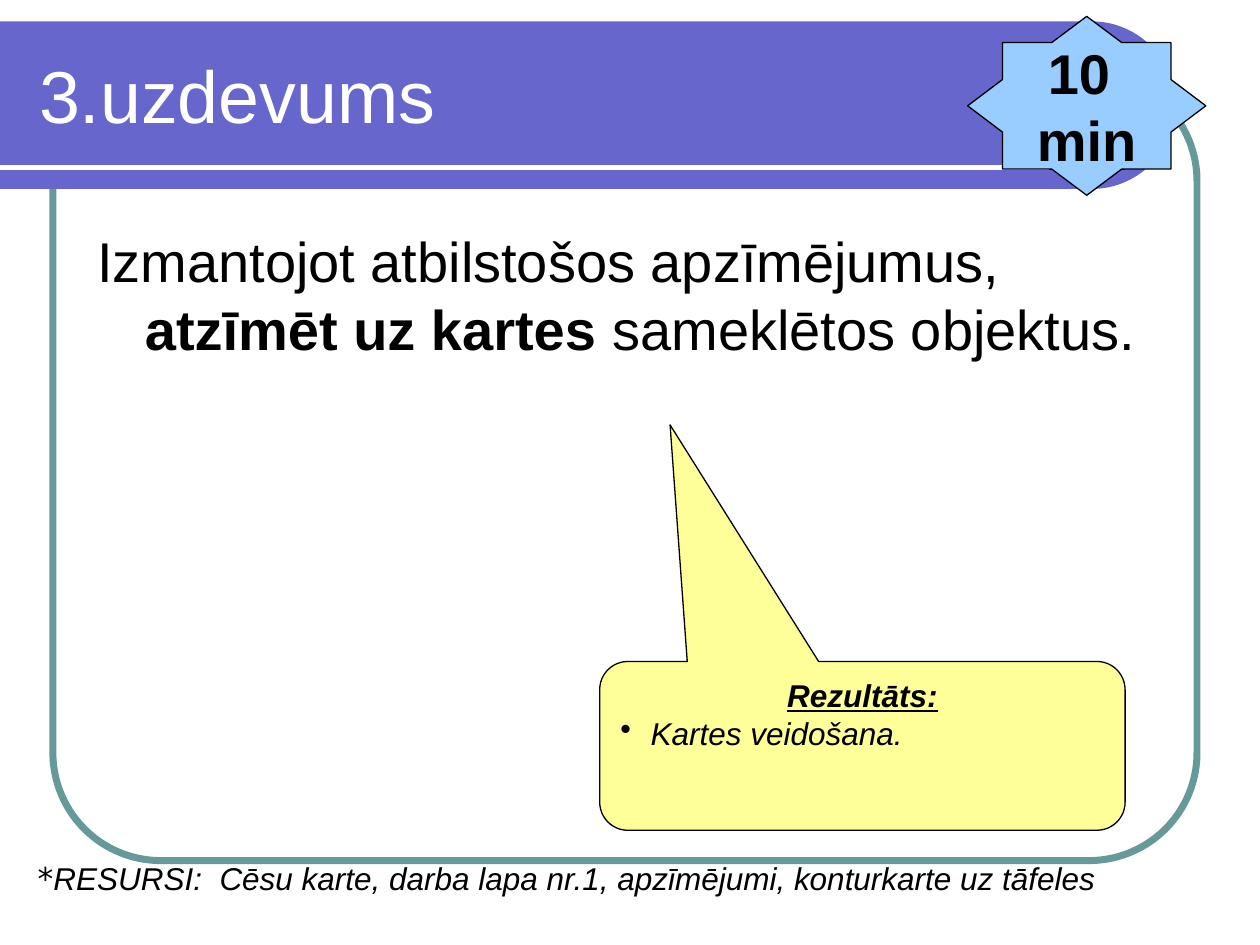
import math

import pptx
import pptx.dml.color
import pptx.enum.shapes
import pptx.enum.text
import pptx.oxml.ns
import pptx.util
from lxml import etree

Inches = pptx.util.Inches
Pt = pptx.util.Pt
RGBColor = pptx.dml.color.RGBColor
MSO_SHAPE = pptx.enum.shapes.MSO_SHAPE
PP_ALIGN = pptx.enum.text.PP_ALIGN
MSO_ANCHOR = pptx.enum.text.MSO_ANCHOR
MSO_AUTO_SIZE = pptx.enum.text.MSO_AUTO_SIZE
qn = pptx.oxml.ns.qn

TEAL = RGBColor(0x66, 0x99, 0x99)
VIOLET = RGBColor(0x66, 0x66, 0xCC)
WHITE = RGBColor(0xFF, 0xFF, 0xFF)
BLACK = RGBColor(0, 0, 0)
YELLOW = RGBColor(0xFF, 0xFF, 0x99)
SKY = RGBColor(0x99, 0xCC, 0xFF)


def place(shape, box):
    shape.left, shape.top, shape.width, shape.height = map(Inches, box)


def add_runs(paragraph, texts, size, color=BLACK, font="Arial"):
    runs = []
    for text in texts:
        run = paragraph.add_run()
        run.text = text
        run.font.size = Pt(size)
        run.font.name = font
        run.font.color.rgb = color
        runs.append(run)
    return runs


def set_bullet(paragraph, indent, char=None):
    """Give a hanging indent in inches, with a bullet character or none."""
    properties = paragraph._p.get_or_add_pPr()
    properties.set("marL", str(Inches(indent)))
    properties.set("indent", str(-Inches(indent)))
    if char:
        etree.SubElement(properties, qn("a:buChar")).set("char", char)
    else:
        etree.SubElement(properties, qn("a:buNone"))


def add_outlined(slide, kind, box, adjustments, fill, line, width):
    shape = slide.shapes.add_shape(kind, *map(Inches, box))
    for index, value in enumerate(adjustments):
        shape.adjustments[index] = value
    shape.shadow.inherit = False
    if fill is None:
        shape.fill.background()
    else:
        shape.fill.solid()
        shape.fill.fore_color.rgb = fill
    shape.line.color.rgb = line
    shape.line.width = Pt(width)
    return shape


def add_banner(slide, box):
    """Band with a half-round right end and a white rule near its foot."""
    left, top, width, height = box
    radius = height / 2
    center_x, center_y = left + width - radius, top + radius
    steps = 60
    arc = [
        (center_x + radius * math.sin(math.pi * step / steps),
         center_y - radius * math.cos(math.pi * step / steps))
        for step in range(steps + 1)
    ]
    outline = [(Inches(x), Inches(y)) for x, y in arc + [(left, top + height)]]
    builder = slide.shapes.build_freeform(Inches(left), Inches(top))
    builder.add_line_segments(outline, close=True)
    band = builder.convert_to_shape()
    band.shadow.inherit = False
    band.fill.solid()
    band.fill.fore_color.rgb = VIOLET
    band.line.fill.background()

    rule_y = Inches(top + height - 0.17)
    rule = slide.shapes.add_connector(
        pptx.enum.shapes.MSO_CONNECTOR.STRAIGHT,
        Inches(left), rule_y, Inches(left + width - 0.5), rule_y)
    rule.line.color.rgb = WHITE
    rule.line.width = Pt(3)
    etree.SubElement(rule._element.spPr, qn("a:effectLst"))


def fill_title(slide, box):
    title = slide.shapes.title
    place(title, box)
    slide.shapes._spTree.append(title._element)
    frame = title.text_frame
    frame.auto_size = MSO_AUTO_SIZE.NONE
    frame.vertical_anchor = MSO_ANCHOR.MIDDLE
    frame.paragraphs[0].alignment = PP_ALIGN.LEFT
    add_runs(frame.paragraphs[0], ["3.uzdevums"], 42, WHITE)


def fill_task(slide, box):
    task = slide.placeholders[1]
    place(task, box)
    slide.shapes._spTree.append(task._element)
    task.text_frame.auto_size = MSO_AUTO_SIZE.NONE
    paragraph = task.text_frame.paragraphs[0]
    paragraph.space_before = Pt(6.4)
    set_bullet(paragraph, 0.38)
    runs = add_runs(paragraph, [
        "Izmantojot atbilstošos apzīmējumus, ",
        "atzīmēt uz kartes",
        " sameklētos objektus.",
    ], 32)
    runs[1].font.bold = True


def add_result(slide, box):
    callout = add_outlined(slide, MSO_SHAPE.ROUNDED_RECTANGULAR_CALLOUT, box,
                           (-0.366, -1.901, 0.167), YELLOW, BLACK, 0.75)
    frame = callout.text_frame
    frame.vertical_anchor = MSO_ANCHOR.TOP
    heading, outcome = frame.paragraphs[0], frame.add_paragraph()
    heading.alignment = PP_ALIGN.CENTER
    outcome.alignment = PP_ALIGN.LEFT
    set_bullet(outcome, 0.24, "•")
    heading_run, = add_runs(heading, ["Rezultāts:"], 18)
    heading_run.font.bold = heading_run.font.underline = True
    outcome_run, = add_runs(outcome, ["Kartes veidošana."], 18)
    heading_run.font.italic = outcome_run.font.italic = True


def add_resources(slide, box):
    resources = slide.shapes.add_textbox(*map(Inches, box))
    frame = resources.text_frame
    frame.word_wrap = True
    frame.auto_size = MSO_AUTO_SIZE.SHAPE_TO_FIT_TEXT
    paragraph = frame.paragraphs[0]
    paragraph.line_spacing = 0.9
    paragraph.space_before = Pt(3.6)
    runs = add_runs(paragraph, ["*"], 18, font="DejaVu Sans")
    runs += add_runs(paragraph, [
        "RESURSI:  Cēsu karte, darba lapa nr.1, apzīmējumi, konturkarte uz tāfeles"
    ], 18)
    for run in runs:
        run.font.italic = True


def add_time_badge(slide, box):
    star = add_outlined(slide, MSO_SHAPE.STAR_8_POINT, box, (0.383,), SKY, BLACK, 0.75)
    frame = star.text_frame
    frame.word_wrap = False
    frame.vertical_anchor = MSO_ANCHOR.MIDDLE
    frame.text = "10 \nmin"
    for paragraph in frame.paragraphs:
        paragraph.alignment = PP_ALIGN.CENTER
        font = paragraph.runs[0].font
        font.name, font.size, font.bold = "Arial", Pt(32), True
        font.color.rgb = BLACK


def main():
    deck = pptx.Presentation()
    deck.slide_width, deck.slide_height = Inches(10), Inches(7.5)
    slide = deck.slides.add_slide(deck.slide_layouts[1])
    add_outlined(slide, MSO_SHAPE.ROUNDED_RECTANGLE, (0.42, 0.58, 9.08, 6.25),
                 (0.137,), None, TEAL, 4)
    add_banner(slide, (0, 0.17, 9.33, 1.33))
    fill_title(slide, (0.21, 0.25, 8.77, 1))
    fill_task(slide, (0.67, 1.75, 8.67, 2.47))
    add_result(slide, (4.76, 5.25, 4.17, 1.34))
    add_resources(slide, (0.2, 6.8, 8.98, 0.37))
    add_time_badge(slide, (7.68, 0.13, 1.89, 1.42))
    deck.save("out.pptx")


if __name__ == "__main__":
    main()
